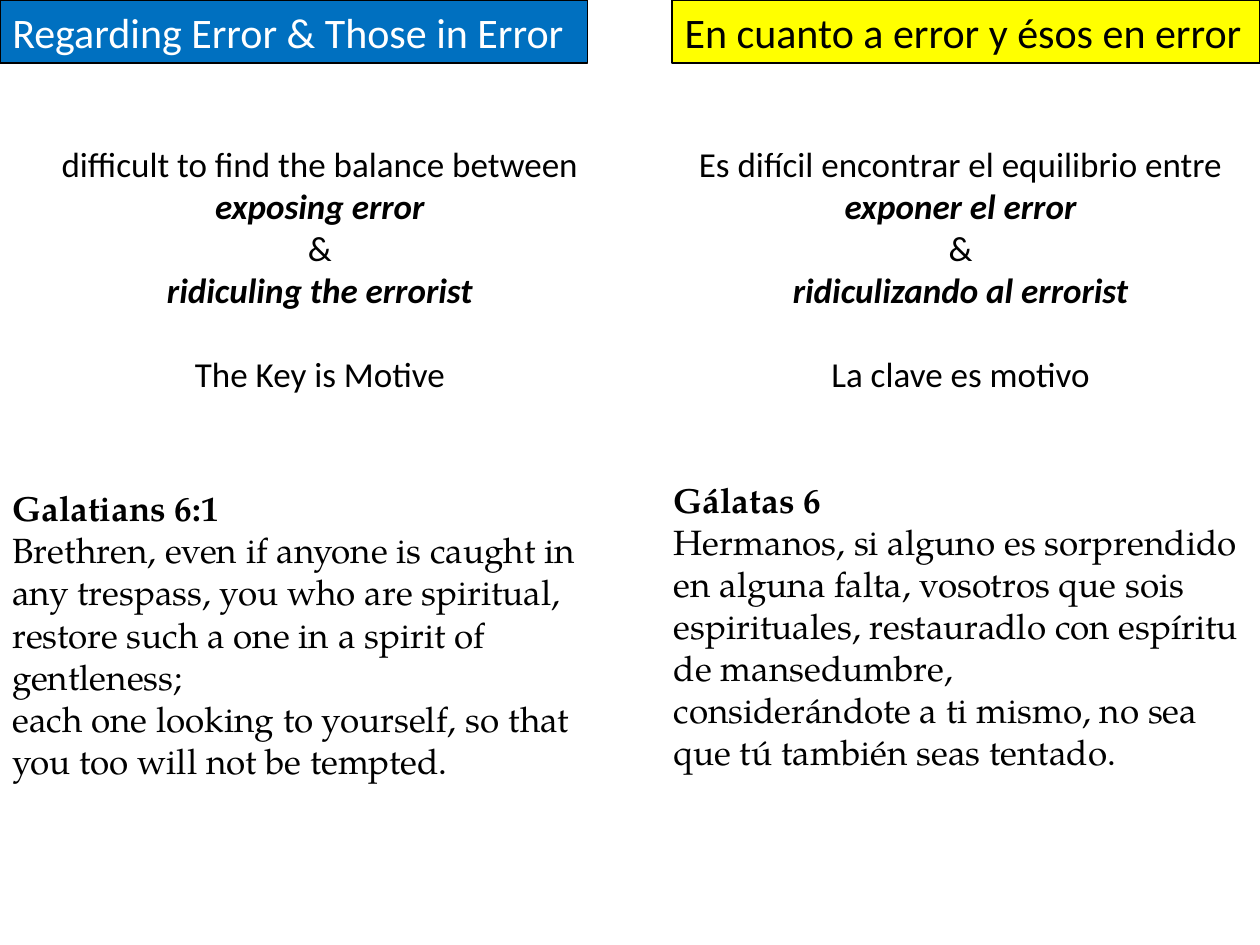
from dataclasses import dataclass

from pptx import Presentation
from pptx.dml.color import RGBColor
from pptx.enum.shapes import MSO_SHAPE
from pptx.enum.text import MSO_ANCHOR, MSO_AUTO_SIZE, PP_ALIGN
from pptx.util import Cm, Pt

RECTANGLE = MSO_SHAPE.RECTANGLE
TOP = MSO_ANCHOR.TOP
GROW = MSO_AUTO_SIZE.SHAPE_TO_FIT_TEXT
LEFT, CENTER = PP_ALIGN.LEFT, PP_ALIGN.CENTER


@dataclass(frozen=True)
class Theme:
    black: RGBColor = RGBColor(0, 0, 0)
    white: RGBColor = RGBColor(255, 255, 255)
    blue: RGBColor = RGBColor(0, 0x70, 0xC0)
    yellow: RGBColor = RGBColor(255, 255, 0)
    sans: str = "Calibri"
    serif: str = "TeX Gyre Pagella"
    title_size: Pt = Pt(24)
    body_size: Pt = Pt(20)


THEME = Theme()
SLIDE_WIDTH, SLIDE_HEIGHT = 25.4, 19.05
BANNER_WIDTH, BANNER_HEIGHT = 11.85, 1.27
BODY_TOP = 2.74
LINE_GAP = 24  # points, one body line


def style(paragraph, face, size, color, align=LEFT, gap=0):
    paragraph.alignment = align
    paragraph.space_before = Pt(gap)
    paragraph.font.name = face
    paragraph.font.size = size
    paragraph.font.color.rgb = color


def add_banner(slide, box, title, fill, color):
    banner = slide.shapes.add_shape(RECTANGLE, *map(Cm, box))
    banner.shadow.inherit = False
    banner.fill.solid()
    banner.fill.fore_color.rgb = fill
    banner.line.color.rgb = THEME.black
    banner.line.width = Pt(0.75)
    frame = banner.text_frame
    frame.word_wrap = True
    frame.auto_size = GROW
    frame.vertical_anchor = TOP
    frame.text = title
    style(frame.paragraphs[0], THEME.sans, THEME.title_size, color)


def add_body(slide, box, balance, key, verse, verse_gap):
    """Centred statement, its key, then the scripture set in serif."""
    frame = slide.shapes.add_textbox(*map(Cm, box)).text_frame
    frame.word_wrap = True
    frame.auto_size = GROW
    paragraphs = iter([frame.paragraphs[0]])

    def add_line(face, align=LEFT, gap=0):
        paragraph = next(paragraphs, None) or frame.add_paragraph()
        style(paragraph, face, THEME.body_size, THEME.black, align, gap)
        return paragraph

    # Statement: each line is a list of (text, emphasised) pieces
    for pieces in balance:
        line = add_line(THEME.sans, CENTER)
        for text, emphasised in pieces:
            run = line.add_run()
            run.text = text
            if emphasised:
                run.font.bold = run.font.italic = True
    add_line(THEME.sans, CENTER, LINE_GAP).text = key

    # Scripture: bold reference followed by its sentences
    reference, *sentences = verse
    heading = add_line(THEME.serif, gap=verse_gap)
    heading.text = reference
    heading.font.bold = True
    for sentence in sentences:
        add_line(THEME.serif).text = sentence


def main():
    deck = Presentation()
    deck.slide_width, deck.slide_height = Cm(SLIDE_WIDTH), Cm(SLIDE_HEIGHT)
    slide = deck.slides.add_slide(deck.slide_layouts[6])

    # English column
    add_banner(slide, (0, 0, BANNER_WIDTH, BANNER_HEIGHT),
               "Regarding Error & Those in Error", THEME.blue, THEME.white)
    add_body(
        slide, (0, BODY_TOP, 12.9, 13.26),
        balance=[
            [("difficult to find the balance between ", False),
             ("exposing error", True)],
            [("&", False)],
            [("ridiculing the errorist", True)],
        ],
        key="The Key is Motive",
        verse=[
            "Galatians 6:1",
            "Brethren, even if anyone is caught in any trespass, you who are "
            "spiritual, restore such a one in a spirit of gentleness;",
            "each one looking to yourself, so that you too will not be tempted.",
        ],
        verse_gap=2 * LINE_GAP + 5,
    )

    # Spanish column
    add_banner(slide,
               (SLIDE_WIDTH - BANNER_WIDTH, 0, BANNER_WIDTH, BANNER_HEIGHT),
               "En cuanto a error y ésos en error", THEME.yellow, THEME.black)
    add_body(
        slide, (13.33, BODY_TOP, 12.07, 13.08),
        balance=[
            [("Es difícil encontrar el equilibrio entre", False)],
            [("exponer el error", True)],
            [("&", False)],
            [("ridiculizando al errorist", True)],
        ],
        key="La clave es motivo",
        verse=[
            "Gálatas 6",
            "Hermanos, si alguno es sorprendido en alguna falta, vosotros que "
            "sois espirituales, restauradlo con espíritu de mansedumbre,",
            "considerándote a ti mismo, no sea que tú también seas tentado.",
        ],
        verse_gap=2 * LINE_GAP,
    )

    deck.save("out.pptx")


if __name__ == "__main__":
    main()
